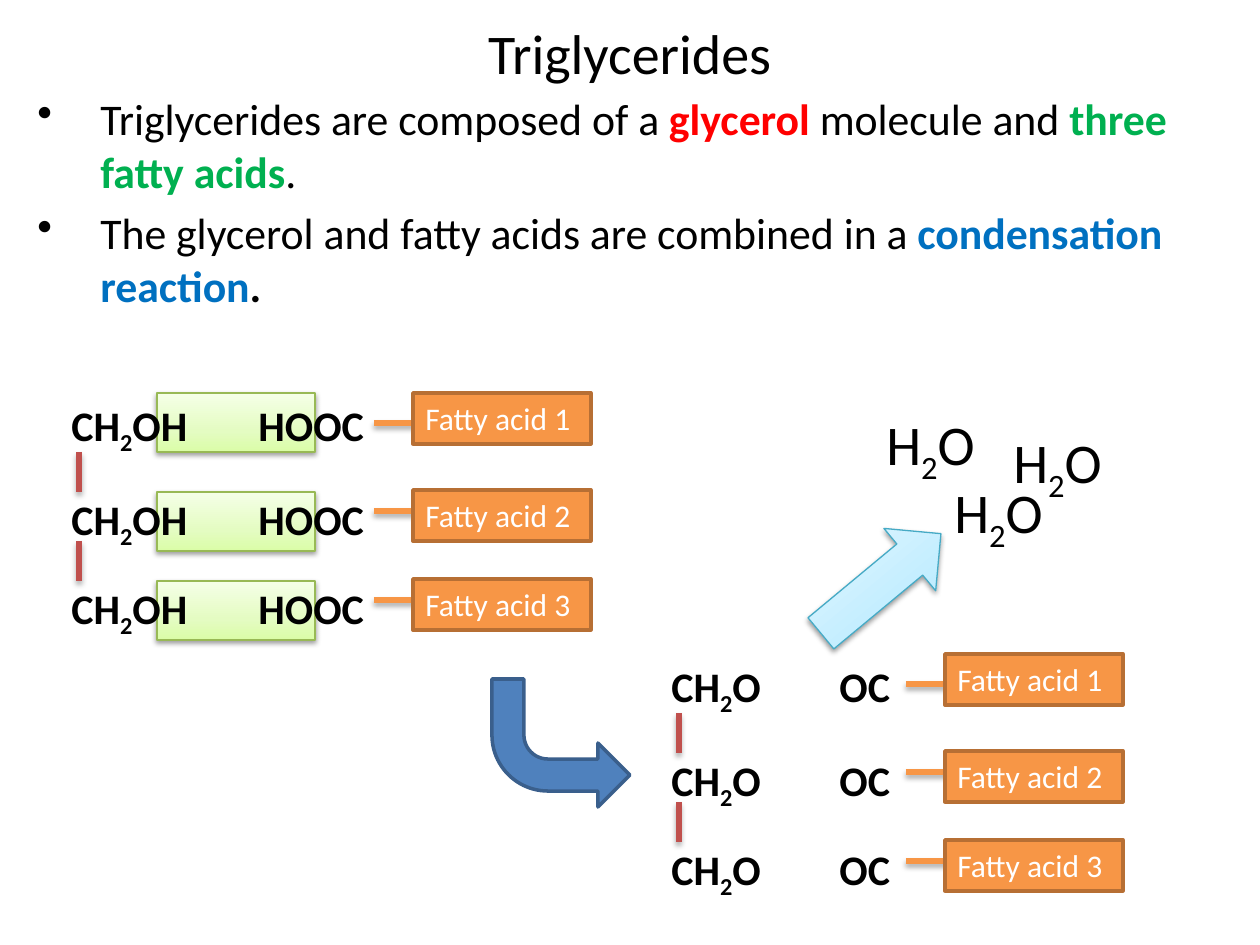
import copy
import pptx
import pptx.dml.color
import pptx.enum.shapes
import pptx.enum.text
import pptx.oxml
import pptx.oxml.ns
import pptx.util

SHAPE = pptx.enum.shapes.MSO_SHAPE
ALIGN = pptx.enum.text.PP_ALIGN
ANCHOR = pptx.enum.text.MSO_ANCHOR
FIT = pptx.enum.text.MSO_AUTO_SIZE
Pt = pptx.util.Pt
qn = pptx.oxml.ns.qn

COLORS = {
    "black": "000000", "white": "FFFFFF", "red": "FF0000", "green": "00B050", "blue": "0070C0",
    "acid": "F79646", "acid edge": "B76F34", "backbone": "C0504D",
    "bend": "4F81BD", "bend edge": "3A5F8C", "leaving edge": "98B955", "release edge": "46AAC5",
}
LEAVING_GRADIENT = [(0, "DAFDA7"), (0.35, "E4FCC2"), (1, "F5FFE7")]
RELEASE_GRADIENT = [(0, "A7E6FF"), (0.35, "C1EDFF"), (1, "E7F8FF")]

TITLE = "Triglycerides"
# Each run: text, colour, bold
POINTS = [
    [("Triglycerides are composed of a ", "black", False), ("glycerol ", "red", True),
     ("molecule and ", "black", False), ("three fatty acids", "green", True),
     (".", "black", False)],
    [("The glycerol and fatty acids are combined in a ", "black", False),
     ("condensation reaction", "blue", True), (".", "black", True)],
]
ACIDS = ["Fatty acid 1", "Fatty acid 2", "Fatty acid 3"]
# Horizontal places of each part, and the top that the rows are measured from
MOLECULES = [
    {"top": 393, "glycerol": ("CH2OH", 59), "acid end": ("HOOC", 246), "backbone": 79,
     "bond": 374, "acid": 413, "leaving": 157},
    {"top": 654, "glycerol": ("CH2O", 659), "acid end": ("OC", 827), "backbone": 679,
     "bond": 906, "acid": 945, "leaving": None},
]
# Offsets below the molecule's top, one per row
FORMULA_ROWS = [0, 94, 183]
ACID_ROWS = [0, 97, 186]
BOND_ROWS = [30, 118, 207]
LEAVING_ROWS = [0, 99, 188]
BACKBONE_ROWS = [59, 148]
WATERS = [(857, 403), (925, 471), (984, 421)]

PX = 914400 // 126


def px(*lengths):
    return [length * PX for length in lengths]


def rgb(name):
    return pptx.dml.color.RGBColor.from_string(COLORS.get(name, name))


def formula(text):
    """Split a formula into runs so that digits can be lowered."""
    return [(part, None, None) for part in text.replace("2", "|2|").split("|")]


def write(frame, paragraphs, size, color="black", bold=False, align=ALIGN.LEFT,
          anchor=ANCHOR.TOP, fit=FIT.SHAPE_TO_FIT_TEXT, bullet=False):
    frame.word_wrap = True
    frame.auto_size = fit
    frame.vertical_anchor = anchor
    for index, runs in enumerate(paragraphs):
        paragraph = frame.add_paragraph() if index else frame.paragraphs[0]
        paragraph.alignment = align
        if bullet:
            paragraph.space_before = Pt(size * 0.2)
            properties = paragraph._p.get_or_add_pPr()
            properties.set("marL", str(63 * PX))
            properties.set("indent", str(-63 * PX))
            pptx.oxml.ns  # namespace table used by qn
            mark = properties.makeelement(qn("a:buChar"), {"char": "•"})
            properties.append(mark)
        for text, run_color, run_bold in runs:
            run = paragraph.add_run()
            run.text = text
            run.font.name = "Calibri"
            run.font.size = Pt(size)
            run.font.bold = bold if run_bold is None else run_bold
            run.font.color.rgb = rgb(run_color or color)
            if text.isdigit():
                run.font._element.set("baseline", "-25000")


def add_text(slide, box, paragraphs, size, **style):
    write(slide.shapes.add_textbox(*px(*box)).text_frame, paragraphs, size, **style)


def cast_shadow(shape, distance, opacity):
    properties = shape._element.spPr
    for effects in properties.findall(qn("a:effectLst")):
        properties.remove(effects)
    properties.append(pptx.oxml.parse_xml(
        '<a:effectLst xmlns:a="http://schemas.openxmlformats.org/drawingml/2006/main">'
        f'<a:outerShdw blurRad="{Pt(3.1)}" dist="{Pt(distance)}" dir="5400000" rotWithShape="0">'
        f'<a:srgbClr val="000000"><a:alpha val="{opacity * 1000}"/></a:srgbClr>'
        '</a:outerShdw></a:effectLst>'))


def add_block(slide, kind, box, fill, edge, width):
    """Add a shape; a list as fill is a bottom-to-top gradient with a shadow."""
    block = slide.shapes.add_shape(kind, *px(*box))
    block.shadow.inherit = False
    block.line.color.rgb = rgb(edge)
    block.line.width = Pt(width)
    if isinstance(fill, str):
        block.fill.solid()
        block.fill.fore_color.rgb = rgb(fill)
        return block
    block.fill.gradient()
    block.fill.gradient_angle = 90
    stops = block._element.spPr.find(qn("a:gradFill")).find(qn("a:gsLst"))
    stops.append(copy.deepcopy(stops[0]))
    for stop, (position, color) in zip(block.fill.gradient_stops, fill):
        stop.position = position
        stop.color.rgb = rgb(color)
    cast_shadow(block, 1.6, 38)
    return block


def add_bond(slide, start, end, color):
    bond = slide.shapes.add_connector(pptx.enum.shapes.MSO_CONNECTOR.STRAIGHT, *px(*start, *end))
    bond.line.color.rgb = rgb(color)
    bond.line.width = Pt(3)
    cast_shadow(bond, 1.8, 35)


def add_molecule(slide, molecule):
    top = molecule["top"]
    if molecule["leaving"]:
        for row in LEAVING_ROWS:
            add_block(slide, SHAPE.RECTANGLE, (molecule["leaving"], top + row, 158, 59),
                      LEAVING_GRADIENT, "leaving edge", 0.75)
    for row in FORMULA_ROWS:
        for text, left in (molecule["glycerol"], molecule["acid end"]):
            add_text(slide, (left, top + row, 168, 63), [formula(text)], 24, bold=True)
    for row in BOND_ROWS:
        left = molecule["bond"]
        add_bond(slide, (left, top + row), (left + 69, top + row), "acid")
    for row in BACKBONE_ROWS:
        left = molecule["backbone"]
        add_bond(slide, (left, top + row), (left, top + row + 40), "backbone")
    for name, row in zip(ACIDS, ACID_ROWS):
        acid = add_block(slide, SHAPE.RECTANGLE, (molecule["acid"], top + row, 178, 51),
                         "acid", "acid edge", 2)
        write(acid.text_frame, [[(name, None, None)]], 18, color="white")


def main():
    deck = pptx.Presentation()
    deck.slide_width, deck.slide_height = px(1260, 945)
    slide = deck.slides.add_slide(deck.slide_layouts[6])
    add_text(slide, (63, 28, 1134, 48), [[(TITLE, None, None)]], 32, align=ALIGN.CENTER,
             anchor=ANCHOR.MIDDLE, fit=FIT.NONE)
    add_text(slide, (25, 86, 1211, 833), POINTS, 25, fit=FIT.NONE, bullet=True)
    for molecule in MOLECULES:
        add_molecule(slide, molecule)

    bend = add_block(slide, SHAPE.BENT_ARROW, (492, 679, 138, 128), "bend", "bend edge", 2)
    bend.rotation = 180
    bend._element.spPr.find(qn("a:xfrm")).set("flipH", "1")
    release = add_block(slide, SHAPE.RIGHT_ARROW, (803, 543, 156, 81),
                        RELEASE_GRADIENT, "release edge", 0.75)
    release.rotation = 320.3
    for left, top in WATERS:
        add_text(slide, (left, top, 147, 81), [formula("H2O")], 32, align=ALIGN.CENTER)
    deck.save("out.pptx")


if __name__ == "__main__":
    main()
